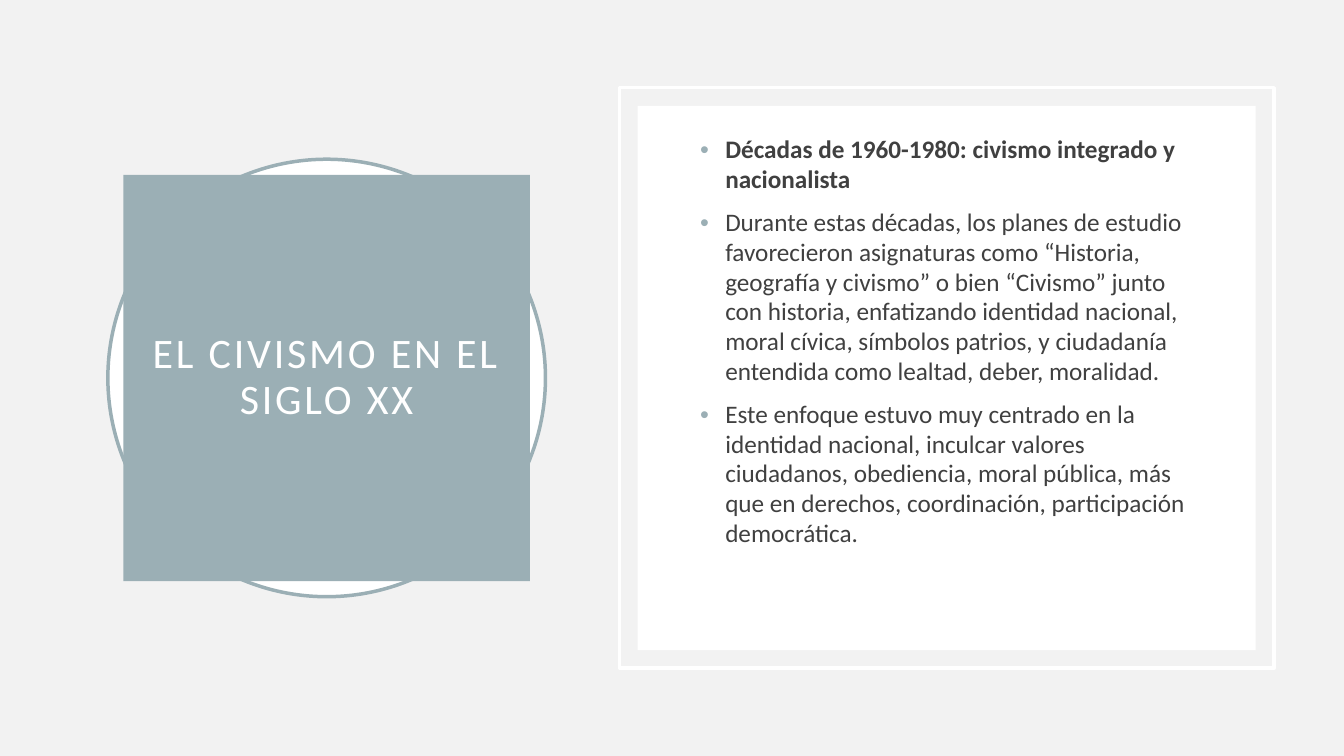
from dataclasses import dataclass
from lxml import etree
from pptx import Presentation
from pptx import util as u
from pptx.dml.color import RGBColor
from pptx.enum import shapes, text
from pptx.oxml import ns

TITLE = "EL CIVISMO EN EL SIGLO XX"
POINTS = [
    ("Décadas de 1960-1980: civismo integrado y nacionalista", True),
    ("Durante estas décadas, los planes de estudio favorecieron asignaturas como "
     "“Historia, geografía y civismo” o bien “Civismo” junto con historia, "
     "enfatizando identidad nacional, moral cívica, símbolos patrios, y ciudadanía "
     "entendida como lealtad, deber, moralidad.", False),
    ("Este enfoque estuvo muy centrado en la identidad nacional, inculcar valores "
     "ciudadanos, obediencia, moral pública, más que en derechos, coordinación, "
     "participación democrática.", False),
]


@dataclass(frozen=True)
class Theme:
    font: str = "Calibri"
    background: str = "F2F2F2"
    accent: str = "9BAFB5"
    white: str = "FFFFFF"
    body: str = "404040"
    title_size: float = 30
    body_size: float = 18
    border: float = 2.5
    tracking: int = 200
    gap: float = 9.8


THEME = Theme()
WIDTH, HEIGHT = 13.33, 7.5
MIDDLE = HEIGHT / 2
TITLE_CENTER, PANEL_CENTER = 3.24, 9.39


def color(value):
    return RGBColor.from_string(value)


def centered(center, width, height):
    return [u.Inches(n) for n in (center - width / 2, MIDDLE - height / 2, width, height)]


def add_panel(page, kind, frame, fill=None, line=None):
    panel = page.shapes.add_shape(kind, *frame)
    panel.shadow.inherit = False
    if fill:
        panel.fill.solid()
        panel.fill.fore_color.rgb = color(fill)
    else:
        panel.fill.background()
    if line:
        panel.line.color.rgb = color(line)
        panel.line.width = u.Pt(THEME.border)
    else:
        panel.line.fill.background()
    return panel


def style(span, size, tone, bold=False):
    span.font.name = THEME.font
    span.font.size = u.Pt(size)
    span.font.bold = bold
    span.font.color.rgb = color(tone)


def add_bullet(para):
    props = para._p.get_or_add_pPr()
    indent = u.Inches(0.25)
    props.set("marL", str(indent))
    props.set("indent", str(-indent))
    tint = etree.SubElement(props, ns.qn("a:buClr"))
    etree.SubElement(tint, ns.qn("a:srgbClr"), val=THEME.accent)
    etree.SubElement(props, ns.qn("a:buFont"), typeface="Arial")
    etree.SubElement(props, ns.qn("a:buChar"), char="•")


def add_title(page):
    kinds = shapes.MSO_SHAPE
    add_panel(page, kinds.OVAL, centered(TITLE_CENTER, 4.34, 4.34), THEME.white, THEME.accent)
    box = add_panel(page, kinds.RECTANGLE, centered(TITLE_CENTER, 4.03, 4.03), THEME.accent)
    frame = box.text_frame
    frame.word_wrap = True
    frame.vertical_anchor = text.MSO_ANCHOR.MIDDLE
    frame.margin_left = frame.margin_right = u.Inches(0.2)
    frame.margin_top = frame.margin_bottom = u.Inches(0.2)
    frame.text = TITLE
    para = frame.paragraphs[0]
    para.alignment = text.PP_ALIGN.CENTER
    para.line_spacing = 0.9
    span = para.runs[0]
    style(span, THEME.title_size, THEME.white)
    span.font._element.set("spc", str(THEME.tracking))


def add_body(page):
    rectangle = shapes.MSO_SHAPE.RECTANGLE
    add_panel(page, rectangle, centered(PANEL_CENTER, 6.49, 5.76), line=THEME.white)
    add_panel(page, rectangle, centered(PANEL_CENTER, 6.13, 5.4), fill=THEME.white)
    box = page.shapes.add_textbox(*centered(PANEL_CENTER, 5.09, 4.34))
    frame = box.text_frame
    frame.word_wrap = True
    frame.vertical_anchor = text.MSO_ANCHOR.MIDDLE
    frame.margin_bottom = u.Inches(0.77)
    frame.text = "\n".join(words for words, _ in POINTS)
    for index, (para, (_, bold)) in enumerate(zip(frame.paragraphs, POINTS)):
        para.line_spacing = 0.98
        para.space_before = u.Pt(THEME.gap if index else 0)
        add_bullet(para)
        style(para.runs[0], THEME.body_size, THEME.body, bold)


def main():
    deck = Presentation()
    deck.slide_width, deck.slide_height = u.Inches(WIDTH), u.Inches(HEIGHT)
    page = deck.slides.add_slide(deck.slide_layouts[6])
    page.background.fill.solid()
    page.background.fill.fore_color.rgb = color(THEME.background)
    add_title(page)
    add_body(page)
    deck.save("out.pptx")


if __name__ == "__main__":
    main()
